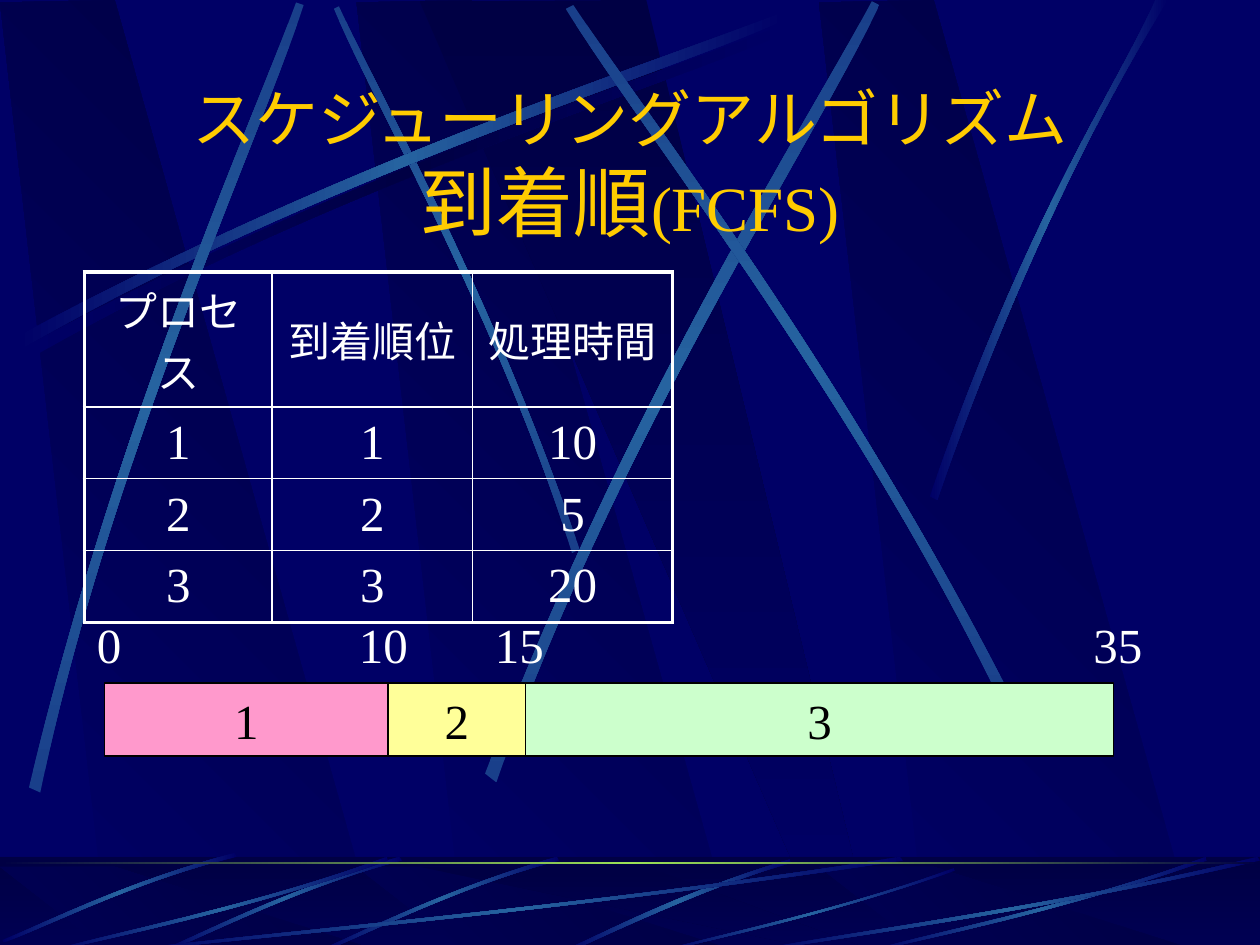
from dataclasses import dataclass
from typing import NamedTuple

from lxml import etree
from pptx import Presentation
from pptx import util as u
from pptx.dml.color import RGBColor
from pptx.enum import shapes, text
from pptx.oxml import ns

SCALE = 9144  # EMU per px, 100 px to the inch


@dataclass(frozen=True)
class Theme:
    font: str = "Times New Roman"
    navy: str = "000066"
    night: str = "000044"
    glow: str = "2663A0"
    dusk: str = "193F8A"
    rule: str = "9CE157"
    title: str = "FFCC00"
    white: str = "FFFFFF"
    black: str = "000000"
    pink: str = "FF99CC"
    yellow: str = "FFFF99"
    green: str = "CCFFCC"
    title_size: int = 36
    title_large: int = 44
    header_size: int = 24
    body_size: int = 28


THEME = Theme()


class Gradient(NamedTuple):
    colors: tuple[str, ...]
    angle: int = 0


class Ray(NamedTuple):
    """Two cubic edges, each as four x, y pairs."""
    near: tuple[int, ...]
    far: tuple[int, ...]
    fill: Gradient


class Job(NamedTuple):
    name: str
    left: int
    width: int
    color: str


class Tick(NamedTuple):
    label: str
    left: int
    width: int


SLANT = Gradient((THEME.navy, THEME.night), 315)
DOWN = Gradient((THEME.night, THEME.navy), 90)
SHADE = Gradient((THEME.navy, THEME.night, THEME.navy))
FADE = Gradient((THEME.navy, THEME.glow, THEME.navy))
STEEP = Gradient((THEME.dusk, THEME.glow, THEME.dusk), 90)
RULE = Gradient((THEME.night, THEME.rule, THEME.night))

BAND_LEFTS = (283, 0, 650)
UPPER_BAND = ((86, 750), (302, 752), (91, 0), (0, 2))
LOWER_BAND = ((86, 755), (302, 755), (91, 688), (0, 688))
UPPER_WEDGE = ((333, 1), (658, 751), (694, 751), (513, 0))
LOWER_WEDGE = ((333, 688), (658, 755), (694, 755), (513, 688))

UPPER_RAYS = (
    Ray((20, 275, 284, 134, 524, 59, 626, 18), (629, 24, 528, 69, 254, 151, 23, 285), SHADE),
    Ray((460, 436, 391, 234, 302, 77, 269, 5), (265, 7, 295, 79, 398, 258, 454, 439), STEEP),
    Ray((14, 267, 278, 125, 518, 51, 620, 10), (623, 16, 522, 61, 248, 143, 17, 277), FADE),
    Ray((23, 625, 93, 334, 197, 105, 235, 2), (241, 4, 207, 109, 86, 368, 32, 629), STEEP),
    Ray((385, 614, 498, 320, 638, 102, 692, 1), (698, 4, 649, 108, 486, 355, 394, 621), STEEP),
    Ray((806, 560, 670, 293, 516, 95, 455, 4), (449, 7, 507, 101, 685, 325, 799, 567), STEEP),
    Ray((738, 394, 814, 173, 888, 66, 917, 0), (927, 0, 836, 145, 769, 322, 744, 397), FADE),
)
LOWER_RAYS = (
    Ray((627, 682, 537, 709, 477, 742, 448, 754), (453, 755, 490, 738, 571, 700, 628, 685), FADE),
    Ray((442, 680, 355, 705, 287, 740, 256, 753), (257, 755, 288, 743, 365, 703, 444, 683), FADE),
    Ray((317, 680, 230, 705, 162, 740, 131, 753), (132, 755, 163, 743, 240, 703, 319, 683), FADE),
    Ray((186, 677, 99, 700, 33, 734, 2, 746), (3, 748, 34, 737, 110, 698, 188, 680), FADE),
    Ray((717, 683, 449, 723, 206, 744, 103, 755), (100, 754, 202, 741, 480, 718, 714, 680), FADE),
    Ray((308, 683, 193, 723, 88, 744, 43, 755), (42, 754, 86, 741, 206, 718, 307, 680), FADE),
    Ray((758, 691, 658, 726, 567, 745, 528, 755), (527, 754, 565, 743, 669, 722, 757, 689), FADE),
    Ray((958, 683, 843, 723, 738, 744, 693, 755), (692, 754, 736, 741, 856, 718, 957, 680), FADE),
    Ray((1000, 683, 827, 723, 669, 744, 602, 755), (600, 754, 666, 741, 846, 718, 998, 680), FADE),
)

COLUMNS = (149, 159, 159)
ROWS = (107, 57, 57, 57)
CELLS = (("プロセス", "到着順位", "処理時間"),
         ("1", "1", "10"), ("2", "2", "5"), ("3", "3", "20"))
JOBS = (Job("1", 83, 225, THEME.pink), Job("2", 308, 109, THEME.yellow),
        Job("3", 417, 467, THEME.green))
TICKS = (Tick("0", 67, 34), Tick("10", 275, 67),
         Tick("15", 383, 67), Tick("35", 858, 73))


def px(*values: int) -> list[int]:
    return [u.Emu(value * SCALE) for value in values]


def set_all(target, values: dict) -> None:
    for name, value in values.items():
        setattr(target, name, value)


def add_span(para, words: str, size: int, color: str) -> None:
    span = para.add_run()
    span.text = words
    set_all(span.font, {"name": THEME.font, "size": u.Pt(size)})
    span.font.color.rgb = RGBColor.from_string(color)


def paint(shape, fill: Gradient | str) -> None:
    shape.shadow.inherit = False
    shape.line.fill.background()
    if isinstance(fill, str):
        shape.fill.solid()
        shape.fill.fore_color.rgb = RGBColor.from_string(fill)
        return
    shape.fill.gradient()
    gradient = shape._element.spPr.find(ns.qn("a:gradFill"))
    stops = gradient.find(ns.qn("a:gsLst"))
    stops.clear()
    for index, color in enumerate(fill.colors):
        position = 100000 * index // (len(fill.colors) - 1)
        stop = etree.SubElement(stops, ns.qn("a:gs"), pos=str(position))
        etree.SubElement(stop, ns.qn("a:srgbClr"), val=color)
    gradient.find(ns.qn("a:lin")).set("ang", str(fill.angle * 60000))


def add_rect(page, left: int, top: int, width: int, height: int, fill: Gradient | str):
    box = page.shapes.add_shape(shapes.MSO_SHAPE.RECTANGLE, *px(left, top, width, height))
    paint(box, fill)
    return box


def add_outline(page, points, fill: Gradient):
    builder = page.shapes.build_freeform(*points[0], scale=SCALE)
    builder.add_line_segments(points[1:], close=True)
    outline = builder.convert_to_shape()
    paint(outline, fill)
    return outline


def add_bands(page, band, wedge) -> None:
    for left in BAND_LEFTS:
        add_outline(page, [(x + left, y) for x, y in band], SLANT)
    add_outline(page, wedge, DOWN)


def add_rays(page, rays: tuple[Ray, ...]) -> None:
    for ray in rays:
        values = ray.near + ray.far
        outline = add_outline(page, list(zip(values[::2], values[1::2])), ray.fill)
        # Join each run of three points into one cubic curve
        lines = list(outline._element.iter(ns.qn("a:lnTo")))
        for trio in (lines[0:3], lines[4:7]):
            curve = etree.Element(ns.qn("a:cubicBezTo"))
            trio[0].addprevious(curve)
            for line in trio:
                curve.append(line[0])
                line.getparent().remove(line)


def add_backdrop(page) -> None:
    page.background.fill.solid()
    page.background.fill.fore_color.rgb = RGBColor.from_string(THEME.navy)
    add_bands(page, UPPER_BAND, UPPER_WEDGE)
    add_rays(page, UPPER_RAYS)
    # Footer strip
    add_rect(page, 0, 680, 1000, 75, DOWN)
    add_bands(page, LOWER_BAND, LOWER_WEDGE)
    veil = add_rect(page, 0, 680, 1000, 75, THEME.night)
    color = veil._element.spPr.find(".//" + ns.qn("a:srgbClr"))
    etree.SubElement(color, ns.qn("a:alpha"), val="50000")
    add_rays(page, LOWER_RAYS)
    add_rect(page, 0, 684, 1000, 2, RULE)


def add_title(page) -> None:
    frame = page.shapes.add_textbox(*px(75, 58, 850, 143)).text_frame
    set_all(frame, {"word_wrap": True, "vertical_anchor": text.MSO_ANCHOR.MIDDLE})
    para = frame.paragraphs[0]
    para.alignment = text.PP_ALIGN.CENTER
    add_span(para, "スケジューリングアルゴリズム", THEME.title_size, THEME.title)
    para.add_line_break()
    add_span(para, "到着順", THEME.title_large, THEME.title)
    add_span(para, "(FCFS)", THEME.title_size, THEME.title)


def add_borders(cell, widths: dict[str, float]) -> None:
    for side, width in widths.items():
        line = etree.SubElement(cell._tc.get_or_add_tcPr(), ns.qn(f"a:ln{side}"),
                                w=str(u.Pt(width)))
        fill = etree.SubElement(line, ns.qn("a:solidFill"))
        etree.SubElement(fill, ns.qn("a:srgbClr"), val=THEME.white)


def add_process_table(page) -> None:
    table = page.shapes.add_table(len(ROWS), len(COLUMNS),
                                  *px(67, 216, sum(COLUMNS), sum(ROWS))).table
    set_all(table, {"first_row": False, "horz_banding": False})
    for column, width in zip(table.columns, px(*COLUMNS)):
        column.width = width
    for row, height in zip(table.rows, px(*ROWS)):
        row.height = height
    for r, words in enumerate(CELLS):
        for c, word in enumerate(words):
            cell = table.cell(r, c)
            outer = {"L": c == 0, "R": c == len(COLUMNS) - 1,
                     "T": r == 0, "B": r == len(ROWS) - 1}
            add_borders(cell, {side: 2.25 if edge else 1 for side, edge in outer.items()})
            cell.fill.background()
            cell.vertical_anchor = text.MSO_ANCHOR.MIDDLE
            para = cell.text_frame.paragraphs[0]
            para.alignment = text.PP_ALIGN.CENTER
            add_span(para, word, THEME.body_size if r else THEME.header_size, THEME.white)


def add_timeline(page) -> None:
    for job in JOBS:
        box = add_rect(page, job.left, 542, job.width, 58, job.color)
        box.line.color.rgb = RGBColor.from_string(THEME.black)
        box.line.width = u.Pt(0.75)
        set_all(box.text_frame, {"word_wrap": False, "vertical_anchor": text.MSO_ANCHOR.MIDDLE})
        para = box.text_frame.paragraphs[0]
        para.alignment = text.PP_ALIGN.CENTER
        add_span(para, job.name, THEME.body_size, THEME.black)
    for tick in TICKS:
        frame = page.shapes.add_textbox(*px(tick.left, 483, tick.width, 57)).text_frame
        frame.word_wrap = True
        add_span(frame.paragraphs[0], tick.label, THEME.body_size, THEME.white)


def main() -> None:
    deck = Presentation()
    deck.slide_width, deck.slide_height = px(1000, 750)
    page = deck.slides.add_slide(deck.slide_layouts[6])
    for draw in (add_backdrop, add_title, add_process_table, add_timeline):
        draw(page)
    deck.save("out.pptx")


if __name__ == "__main__":
    main()
